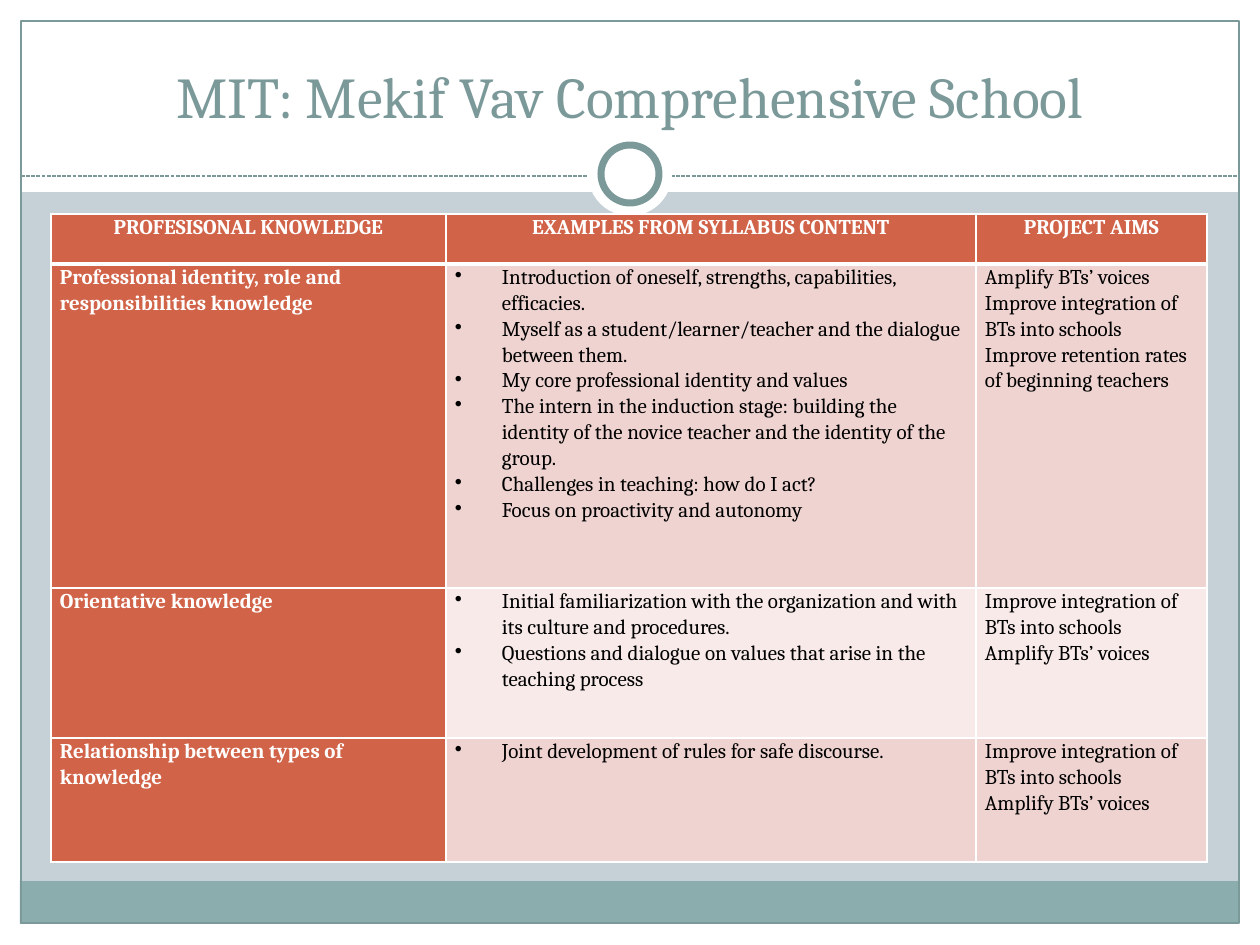
from dataclasses import dataclass

from lxml import etree
from pptx import Presentation
from pptx import util as u
from pptx.dml.color import RGBColor
from pptx.enum import dml, shapes, text
from pptx.oxml.ns import qn

EMU_PER_PX = 914400 / 126


@dataclass(frozen=True)
class Theme:
    font: str = "Cambria"
    title_pt: int = 33
    body_pt: int = 12
    backdrop: str = "C5D1D7"
    white: str = "FFFFFF"
    black: str = "000000"
    slate: str = "7C999A"
    footer: str = "8CADAE"
    accent: str = "D16349"
    bands: tuple[str, str] = ("EED3D0", "F7EAE9")


THEME = Theme()


@dataclass(frozen=True)
class Panel:
    """Master decoration; an empty fill or line means none."""
    left: int
    top: int
    width: int
    height: int
    fill: str = ""
    line: str = ""
    line_pt: float = 0.75
    preset: shapes.MSO_SHAPE = shapes.MSO_SHAPE.RECTANGLE


@dataclass(frozen=True)
class KnowledgeRow:
    height: int
    knowledge: str
    examples: tuple[str, ...]
    aims: tuple[str, ...]


OVAL = shapes.MSO_SHAPE.OVAL
MARGINS_AND_FOOTER = (
    Panel(0, 924, 1260, 21, THEME.white),
    Panel(0, 0, 1260, 192, THEME.white),
    Panel(0, 0, 21, 945, THEME.white),
    Panel(1239, 0, 21, 945, THEME.white),
    Panel(20, 881, 1218, 43, THEME.footer),
    Panel(21, 21, 1218, 902, line=THEME.slate),
)
RING = (
    Panel(588, 132, 84, 84, THEME.white, preset=OVAL),
    Panel(601, 145, 58, 58, THEME.white, THEME.slate, 4, OVAL),
)

TITLE = "MIT: Mekif Vav Comprehensive School"
COLUMN_WIDTHS = (395, 530, 231)
HEADER_HEIGHT = 50
HEADERS = ("PROFESISONAL KNOWLEDGE", "EXAMPLES FROM SYLLABUS CONTENT", "PROJECT AIMS")
VOICES = "Amplify BTs’ voices"
INTEGRATION = "Improve integration of BTs into schools"
ROWS = (
    KnowledgeRow(
        324,
        "Professional identity, role and responsibilities knowledge",
        (
            "Introduction of oneself, strengths, capabilities, efficacies.",
            "Myself as a student/learner/teacher and the dialogue between them.",
            "My core professional identity and values",
            "The intern in the induction stage: building the identity of the novice "
            "teacher and the identity of the group.",
            "Challenges in teaching: how do I act?",
            "Focus on proactivity and autonomy",
        ),
        (VOICES, INTEGRATION, "Improve retention rates of beginning teachers"),
    ),
    KnowledgeRow(
        150,
        "Orientative knowledge",
        (
            "Initial familiarization with the organization and with its culture and procedures.",
            "Questions and dialogue on values that arise in the teaching process",
        ),
        (INTEGRATION, VOICES),
    ),
    KnowledgeRow(
        124,
        "Relationship between types of knowledge",
        ("Joint development of rules for safe discourse.",),
        (INTEGRATION, VOICES),
    ),
)


def px(length: int) -> u.Emu:
    return u.Emu(round(length * EMU_PER_PX))


def rgb(color: str) -> RGBColor:
    return RGBColor.from_string(color)


def add_run(paragraph, content: str, size: int, color: str, bold: bool = False) -> None:
    run = paragraph.add_run()
    run.text = content
    run.font.name = THEME.font
    run.font.size = u.Pt(size)
    run.font.bold = bold
    run.font.color.rgb = rgb(color)


def draw_panel(slide, panel: Panel) -> None:
    box = (px(v) for v in (panel.left, panel.top, panel.width, panel.height))
    shape = slide.shapes.add_shape(panel.preset, *box)
    shape.shadow.inherit = False
    if panel.fill:
        shape.fill.solid()
        shape.fill.fore_color.rgb = rgb(panel.fill)
    else:
        shape.fill.background()
    if panel.line:
        shape.line.color.rgb = rgb(panel.line)
        shape.line.width = u.Pt(panel.line_pt)
    else:
        shape.line.fill.background()


def draw_divider(slide) -> None:
    divider = slide.shapes.add_connector(
        shapes.MSO_CONNECTOR.STRAIGHT, px(21), px(176), px(1239), px(176))
    divider.line.color.rgb = rgb(THEME.slate)
    divider.line.width = u.Pt(0.75)
    divider.line.dash_style = dml.MSO_LINE.SQUARE_DOT
    etree.SubElement(divider.element.spPr, qn("a:effectLst"))


def place_title(slide) -> None:
    title = slide.shapes.title
    title.left, title.top, title.width, title.height = (px(v) for v in (42, 31, 1176, 105))
    frame = title.text_frame
    frame.word_wrap = True
    frame.vertical_anchor = text.MSO_ANCHOR.BOTTOM
    paragraph = frame.paragraphs[0]
    paragraph.alignment = text.PP_ALIGN.CENTER
    add_run(paragraph, TITLE, THEME.title_pt, THEME.slate)
    title.element.getparent().append(title.element)  # in front of the white band


def set_borders(cell, top_pt: int, bottom_pt: int) -> None:
    properties = cell._tc.get_or_add_tcPr()
    for side, width in (("L", 1), ("R", 1), ("T", top_pt), ("B", bottom_pt)):
        line = etree.SubElement(properties, qn(f"a:ln{side}"), w=str(u.Pt(width)))
        fill = etree.SubElement(line, qn("a:solidFill"))
        etree.SubElement(fill, qn("a:srgbClr"), val=THEME.white)


def add_bullet(paragraph) -> None:
    properties = paragraph._p.get_or_add_pPr()
    properties.set("marL", str(px(47)))
    properties.set("indent", str(-px(47)))
    etree.SubElement(properties, qn("a:buChar"), char="•")


def fill_cell(cell, lines: tuple[str, ...], row: int, column: int) -> None:
    header = row == 0
    emphasised = header or column == 0
    set_borders(cell, 3 if row == 1 else 1, 3 if header else 1)
    cell.fill.solid()
    cell.fill.fore_color.rgb = rgb(THEME.accent if emphasised else THEME.bands[(row - 1) % 2])
    cell.margin_left = cell.margin_right = px(9)
    cell.margin_top = cell.margin_bottom = 0
    frame = cell.text_frame
    for index, content in enumerate(lines):
        paragraph = frame.add_paragraph() if index else frame.paragraphs[0]
        paragraph.line_spacing = 1.07
        paragraph.alignment = text.PP_ALIGN.CENTER if header else text.PP_ALIGN.LEFT
        if column == 1 and not header:
            add_bullet(paragraph)
        add_run(paragraph, content, THEME.body_pt,
                THEME.white if emphasised else THEME.black, emphasised)


def draw_knowledge_table(slide) -> None:
    heights = [HEADER_HEIGHT, *(row.height for row in ROWS)]
    table = slide.shapes.add_table(
        len(heights), len(COLUMN_WIDTHS), px(51), px(214),
        px(sum(COLUMN_WIDTHS)), px(sum(heights))).table
    table.horz_banding = False
    for column, width in zip(table.columns, COLUMN_WIDTHS):
        column.width = px(width)
    for row, height in zip(table.rows, heights):
        row.height = px(height)
    contents = [tuple((header,) for header in HEADERS)]
    contents += [((row.knowledge,), row.examples, row.aims) for row in ROWS]
    for r, row_lines in enumerate(contents):
        for c, lines in enumerate(row_lines):
            fill_cell(table.cell(r, c), lines, r, c)


def main() -> None:
    deck = Presentation()
    deck.slide_width, deck.slide_height = px(1260), px(945)
    slide = deck.slides.add_slide(deck.slide_layouts[5])
    slide.background.fill.solid()
    slide.background.fill.fore_color.rgb = rgb(THEME.backdrop)
    for panel in MARGINS_AND_FOOTER:
        draw_panel(slide, panel)
    draw_divider(slide)
    for panel in RING:
        draw_panel(slide, panel)
    place_title(slide)
    draw_knowledge_table(slide)
    deck.save("out.pptx")


if __name__ == "__main__":
    main()
